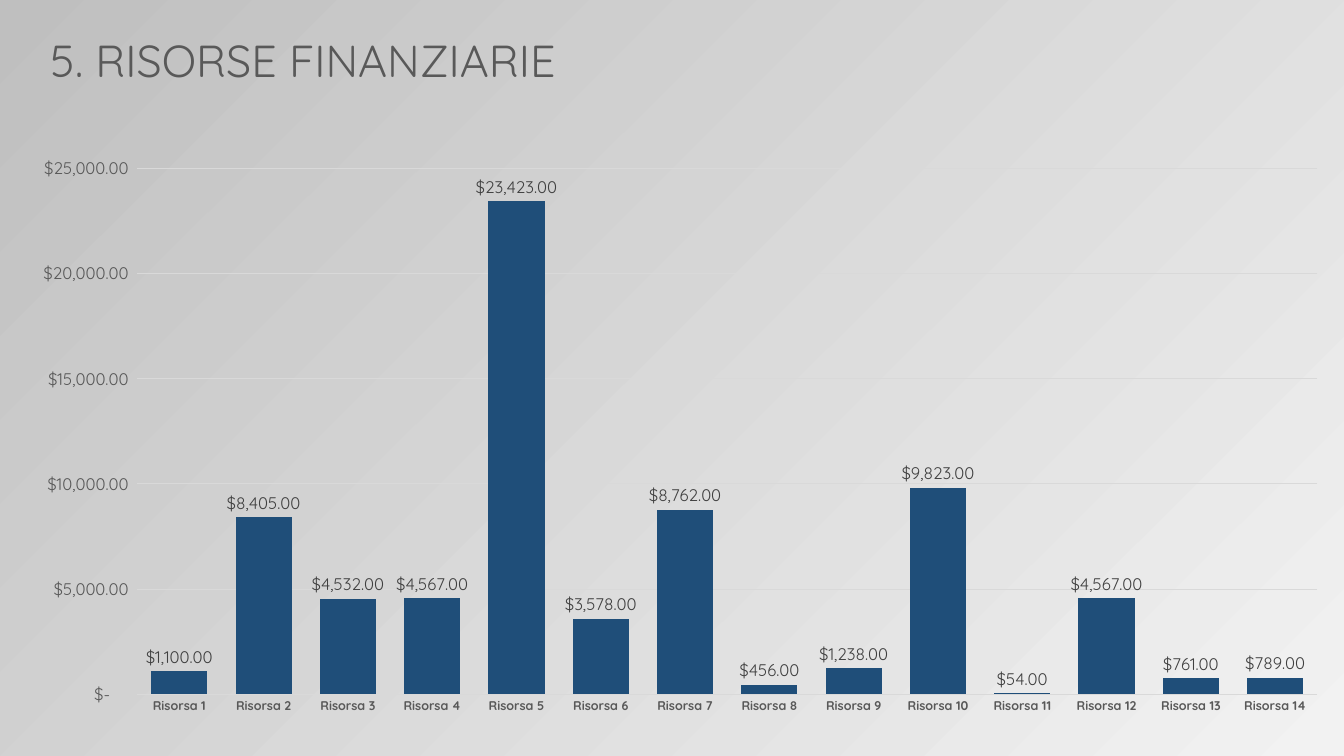
from pptx import Presentation
from pptx.chart.data import CategoryChartData
from pptx.dml.color import RGBColor
from pptx.enum.chart import XL_CHART_TYPE, XL_LABEL_POSITION, XL_TICK_MARK
from pptx.enum.text import MSO_ANCHOR, PP_ALIGN
from pptx.util import Inches, Pt

COLUMNS = XL_CHART_TYPE.COLUMN_CLUSTERED
OUTSIDE_END = XL_LABEL_POSITION.OUTSIDE_END
NO_TICK = XL_TICK_MARK.NONE
MIDDLE = MSO_ANCHOR.MIDDLE
LEFT = PP_ALIGN.LEFT

FONT = "Quicksand"
LIGHT_GREY = RGBColor(0xF2, 0xF2, 0xF2)
MID_GREY = RGBColor(0xBF, 0xBF, 0xBF)
GRID_GREY = RGBColor(0xD9, 0xD9, 0xD9)
TEXT_GREY = RGBColor(0x59, 0x59, 0x59)
LABEL_GREY = RGBColor(0x40, 0x40, 0x40)
BLACK = RGBColor(0, 0, 0)
NAVY = RGBColor(0x1F, 0x4E, 0x79)

ACCOUNTING = '_("$"* #,##0.00_);_("$"* \\(#,##0.00\\);_("$"* "-"??_);_(@_)'
AMOUNTS = [1100, 8405, 4532, 4567, 23423, 3578, 8762,
           456, 1238, 9823, 54, 4567, 761, 789]


def set_font(font, size, color, bold=False):
    """Apply the slide's typeface with a size, colour and weight."""
    font.name = FONT
    font.size = Pt(size)
    font.bold = bold
    font.color.rgb = color


def set_line(line, color):
    """Give a chart line its colour and hairline width."""
    line.color.rgb = color
    line.width = Pt(0.75)


def paint_background(slide):
    """Fill the background with a diagonal grey gradient."""
    fill = slide.background.fill
    fill.gradient()
    fill.gradient_angle = 135
    for stop, color in zip(fill.gradient_stops, (LIGHT_GREY, MID_GREY)):
        stop.color.rgb = color


def add_title(slide, wording):
    """Place and format the slide title."""
    title = slide.shapes.title
    title.left, title.top = Inches(0.4), Inches(0.27)
    title.width, title.height = Inches(5.66), Inches(0.64)
    frame = title.text_frame
    frame.word_wrap = False
    frame.vertical_anchor = MIDDLE
    heading = frame.paragraphs[0]
    heading.alignment = LEFT
    run = heading.add_run()
    run.text = wording
    set_font(run.font, 32, TEXT_GREY)


def format_axes(chart):
    """Format the resource names and the dollar scale."""
    resources = chart.category_axis
    resources.major_tick_mark = resources.minor_tick_mark = NO_TICK
    set_font(resources.tick_labels.font, 9, TEXT_GREY, bold=True)
    set_line(resources.format.line, GRID_GREY)

    dollars = chart.value_axis
    dollars.major_tick_mark = dollars.minor_tick_mark = NO_TICK
    dollars.minimum_scale, dollars.maximum_scale = 0, 25000
    dollars.major_unit = 5000
    dollars.tick_labels.number_format = ACCOUNTING
    dollars.tick_labels.number_format_is_linked = False
    set_font(dollars.tick_labels.font, 12, TEXT_GREY)
    dollars.format.line.fill.background()
    set_line(dollars.major_gridlines.format.line, GRID_GREY)


def format_columns(plot):
    """Colour the columns and label them with their amounts."""
    plot.gap_width = 50
    plot.vary_by_categories = False
    amounts = plot.series[0]
    amounts.format.fill.solid()
    amounts.format.fill.fore_color.rgb = NAVY
    labels = amounts.data_labels
    labels.show_value = True
    labels.position = OUTSIDE_END
    labels.number_format = ACCOUNTING
    labels.number_format_is_linked = False
    set_font(labels.font, 12, LABEL_GREY)


def add_resource_chart(slide):
    """Add the column chart of financial resources."""
    data = CategoryChartData(number_format=ACCOUNTING)
    data.categories = [f"Risorsa {n}" for n in range(1, len(AMOUNTS) + 1)]
    data.add_series("Series 1", AMOUNTS)
    chart = slide.shapes.add_chart(
        COLUMNS, Inches(0.12), Inches(1.45), Inches(13.21), Inches(5.75), data
    ).chart
    chart.has_legend = False
    chart.has_title = False
    set_font(chart.font, 10, BLACK)
    format_axes(chart)
    format_columns(chart.plots[0])


def main():
    """Build the slide and save it."""
    presentation = Presentation()
    presentation.slide_width = Inches(13.33)
    presentation.slide_height = Inches(7.5)
    slide = presentation.slides.add_slide(presentation.slide_layouts[5])
    paint_background(slide)
    add_resource_chart(slide)
    add_title(slide, "5. RISORSE FINANZIARIE")
    presentation.save("out.pptx")


if __name__ == "__main__":
    main()
